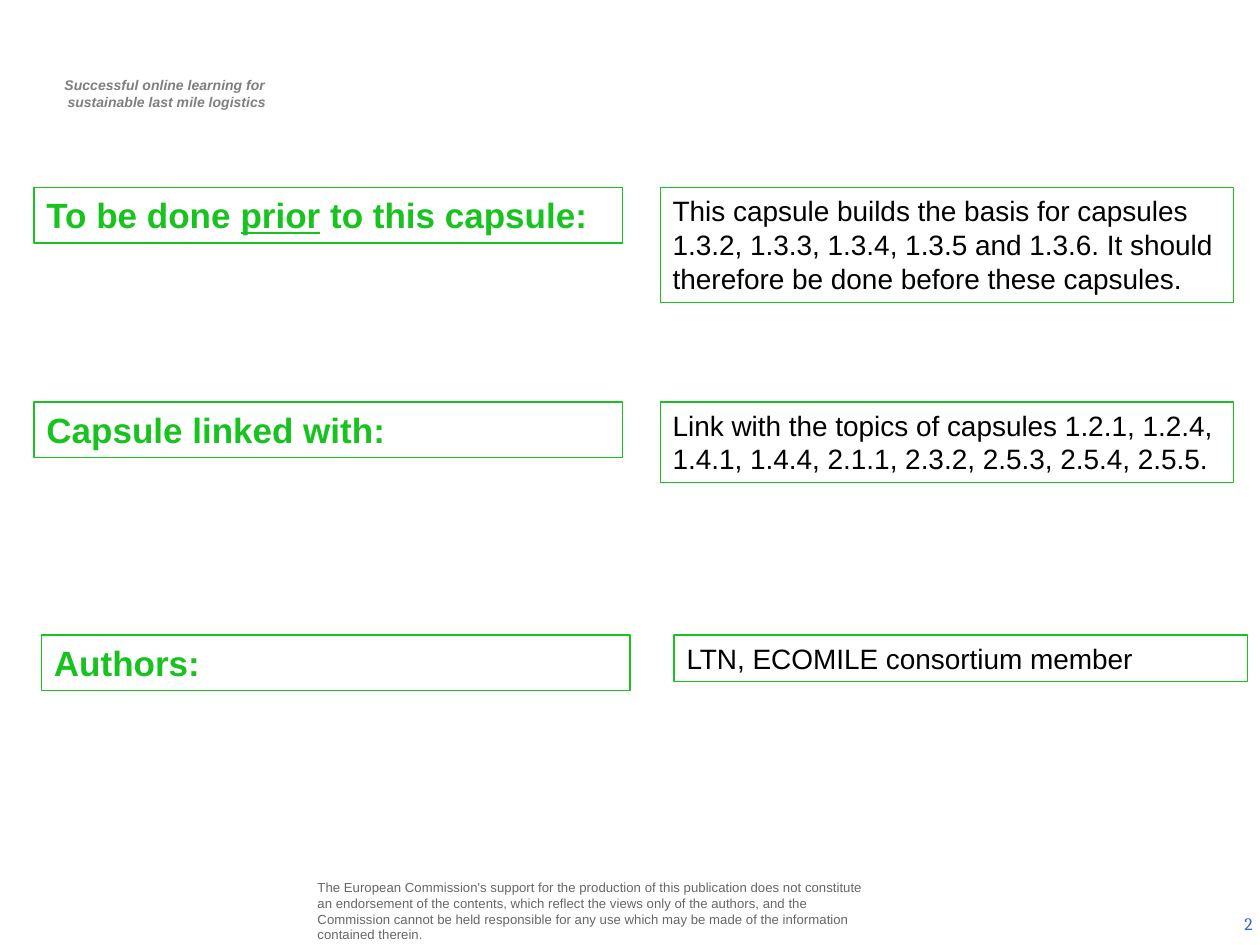
from dataclasses import dataclass

from pptx import Presentation
from pptx.dml.color import RGBColor
from pptx.enum import shapes, text
from pptx.util import Inches, Pt


@dataclass(frozen=True)
class Theme:
    font: str = "Arial"
    number_font: str = "Cambria"
    green: str = "18C320"
    white: str = "FFFFFF"
    black: str = "000000"
    tagline_gray: str = "7F7F7F"
    disclaimer_gray: str = "666666"
    number_blue: str = "3366CC"
    label_size: float = 20
    detail_size: float = 16
    tagline_size: float = 8
    disclaimer_size: float = 7.5
    number_size: float = 10
    border_width: float = 0.75


THEME = Theme()
LABEL_WIDTH, LABEL_HEIGHT = 4.67, 0.44
DETAIL_WIDTH = 4.55

ROWS = [
    (1.49, 0.27, ["To be done ", "prior", " to this capsule:"], 5.24, 0.91,
     "This capsule builds the basis for capsules 1.3.2, 1.3.3, 1.3.4, 1.3.5 and 1.3.6. "
     "It should therefore be done before these capsules."),
    (3.19, 0.27, ["Capsule linked with:"], 5.24, 0.64,
     "Link with the topics of capsules 1.2.1, 1.2.4, 1.4.1, 1.4.4, 2.1.1, 2.3.2, 2.5.3, "
     "2.5.4, 2.5.5."),
    (5.04, 0.33, ["Authors:"], 5.35, 0.37, "LTN, ECOMILE consortium member"),
]
TAGLINE = "Successful online learning for \nsustainable last mile logistics"
DISCLAIMER = (
    "The European Commission's support for the production of this publication does not "
    "constitute an endorsement of the contents, which reflect the views only of the authors, "
    "and the Commission cannot be held responsible for any use which may be made of the "
    "information contained therein."
)


def set_frame(frame, anchor, horizontal=0.1, vertical=0.05):
    frame.word_wrap = True
    frame.vertical_anchor = anchor
    frame.margin_left = frame.margin_right = Inches(horizontal)
    frame.margin_top = frame.margin_bottom = Inches(vertical)


def format_text(frame, size, color, font=THEME.font, bold=False, italic=False,
                align=text.PP_ALIGN.LEFT):
    for paragraph in frame.paragraphs:
        paragraph.alignment = align
        for run in paragraph.runs:
            run.font.name = font
            run.font.size = Pt(size)
            run.font.bold = bold
            run.font.italic = italic
            run.font.color.rgb = RGBColor.from_string(color)


def add_note(slide, left, top, width, height, content, anchor, horizontal=0.1, vertical=0.05):
    box = slide.shapes.add_textbox(Inches(left), Inches(top), Inches(width), Inches(height))
    set_frame(box.text_frame, anchor, horizontal, vertical)
    box.text_frame.text = content
    return box.text_frame


def add_panel(slide, left, top, width, height):
    shape = slide.shapes.add_shape(shapes.MSO_SHAPE.RECTANGLE, Inches(left), Inches(top),
                                   Inches(width), Inches(height))
    shape.shadow.inherit = False
    shape.fill.solid()
    shape.fill.fore_color.rgb = RGBColor.from_string(THEME.white)
    shape.line.color.rgb = RGBColor.from_string(THEME.green)
    shape.line.width = Pt(THEME.border_width)
    set_frame(shape.text_frame, text.MSO_ANCHOR.TOP)
    return shape.text_frame


def add_label(slide, left, top, parts):
    frame = add_panel(slide, left, top, LABEL_WIDTH, LABEL_HEIGHT)
    for part in parts:
        run = frame.paragraphs[0].add_run()
        run.text = part
        run.font.underline = part == "prior"
    format_text(frame, THEME.label_size, THEME.green, bold=True)


def add_detail(slide, left, top, height, content):
    frame = add_panel(slide, left, top, DETAIL_WIDTH, height)
    frame.text = content
    format_text(frame, THEME.detail_size, THEME.black)


def main():
    presentation = Presentation()
    presentation.slide_width = Inches(10)
    presentation.slide_height = Inches(7.5)
    slide = presentation.slides.add_slide(presentation.slide_layouts[6])

    tagline = add_note(slide, 0.31, 0.56, 2.03, 0.37, TAGLINE, text.MSO_ANCHOR.TOP)
    format_text(tagline, THEME.tagline_size, THEME.tagline_gray, bold=True, italic=True,
                align=text.PP_ALIGN.CENTER)
    disclaimer = add_note(slide, 2.48, 6.98, 4.54, 0.5, DISCLAIMER, text.MSO_ANCHOR.MIDDLE,
                          0.04, 0.04)
    format_text(disclaimer, THEME.disclaimer_size, THEME.disclaimer_gray)
    number = add_note(slide, 7.71, 7.13, 2.33, 0.4, "2", text.MSO_ANCHOR.MIDDLE)
    format_text(number, THEME.number_size, THEME.number_blue, THEME.number_font,
                align=text.PP_ALIGN.RIGHT)

    for top, label_left, parts, detail_left, detail_height, detail in ROWS:
        add_label(slide, label_left, top, parts)
        add_detail(slide, detail_left, top, detail_height, detail)

    presentation.save("out.pptx")


if __name__ == "__main__":
    main()
